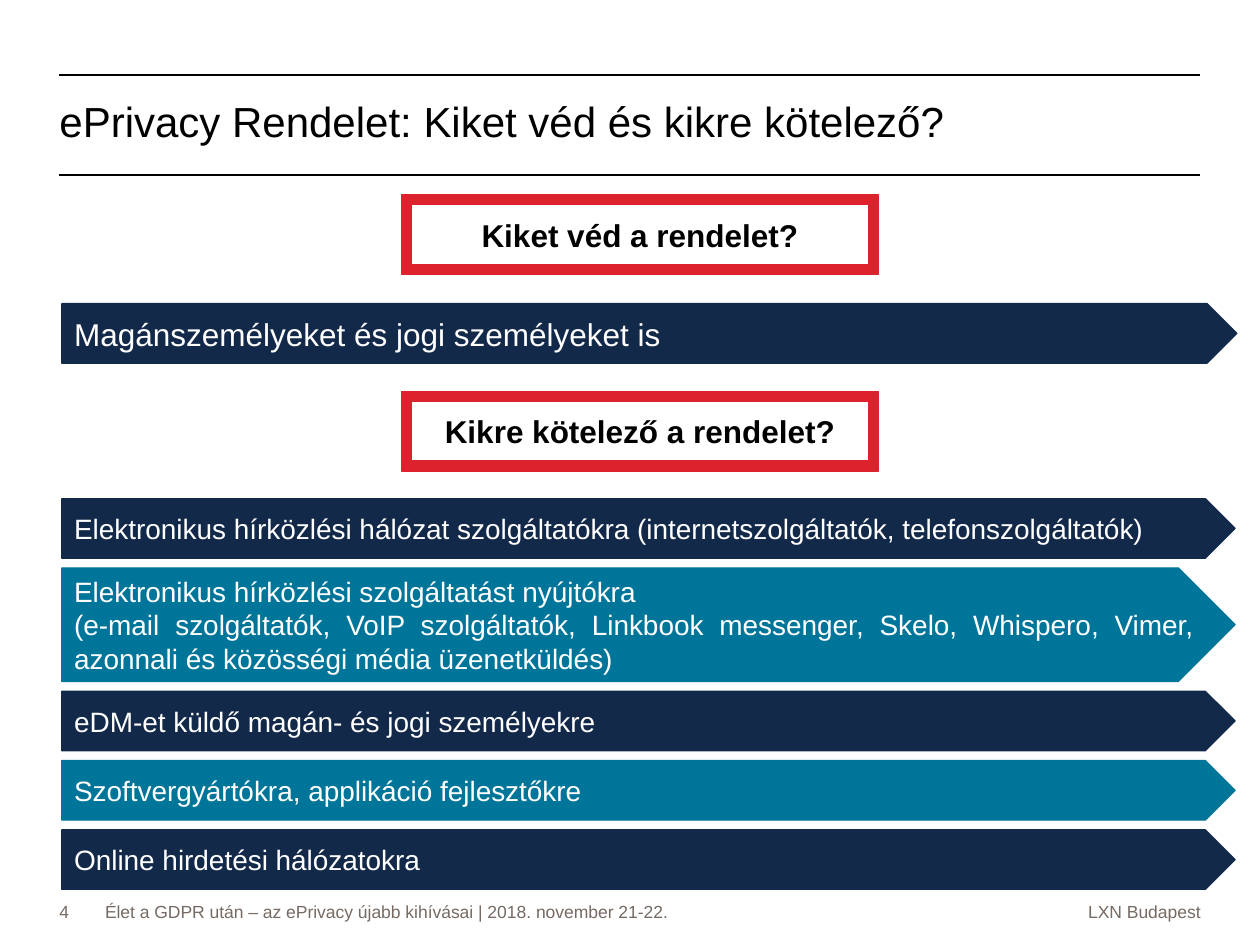
from lxml.etree import SubElement
from pptx import Presentation
from pptx.dml.color import RGBColor
from pptx.enum.shapes import MSO_CONNECTOR, MSO_SHAPE
from pptx.enum.text import MSO_ANCHOR, PP_ALIGN
from pptx.oxml.ns import qn
from pptx.util import Pt

COLORS = {
    "black": "000000",
    "white": "FFFFFF",
    "red": "DC222D",
    "navy": "13294A",
    "teal": "00759A",
    "gray": "766A62",
}
MARGIN = 34
CONTENT_WIDTH = 652
ARROW_HEIGHT = 34
ARROW_GAP = 5.6
OBLIGED_PARTIES = [
    (["Elektronikus hírközlési hálózat szolgáltatókra "
      "(internetszolgáltatók, telefonszolgáltatók)"], ARROW_HEIGHT),
    (["Elektronikus hírközlési szolgáltatást nyújtókra",
      "(e-mail szolgáltatók, VoIP szolgáltatók, Linkbook messenger, Skelo, "
      "Whispero, Vimer, azonnali és közösségi média üzenetküldés)"], 64.8),
    (["eDM-et küldő magán- és jogi személyekre"], ARROW_HEIGHT),
    (["Szoftvergyártókra, applikáció fejlesztőkre"], ARROW_HEIGHT),
    (["Online hirdetési hálózatokra"], ARROW_HEIGHT),
]


def color(name):
    """Return the named palette colour."""
    return RGBColor.from_string(COLORS[name])


def write_text(shape, lines, size, font_color, bold=False, align=PP_ALIGN.LEFT,
               anchor=MSO_ANCHOR.MIDDLE, line_spacing=None):
    """Fill a shape with one formatted paragraph per line."""
    frame = shape.text_frame
    frame.word_wrap = True
    frame.vertical_anchor = anchor
    for index, line in enumerate(lines):
        paragraph = frame.add_paragraph() if index else frame.paragraphs[0]
        paragraph.alignment = align
        paragraph.line_spacing = line_spacing
        run = paragraph.add_run()
        run.text = line
        run.font.name = "Arial"
        run.font.size = Pt(size)
        run.font.bold = bold
        run.font.color.rgb = color(font_color)


def add_label(slide, box, text, **text_format):
    """Add a text box without insets."""
    shape = slide.shapes.add_textbox(*map(Pt, box))
    frame = shape.text_frame
    frame.margin_left = frame.margin_right = 0
    frame.margin_top = frame.margin_bottom = 0
    write_text(shape, [text], **text_format)


def add_block(slide, kind, box, fill, lines, **text_format):
    """Add a preset shape with matching fill and outline."""
    shape = slide.shapes.add_shape(kind, *map(Pt, box))
    shape.shadow.inherit = False
    shape.fill.solid()
    shape.fill.fore_color.rgb = color(fill)
    shape.line.color.rgb = color(fill)
    shape.line.width = Pt(0.75)
    write_text(shape, lines, **text_format)


def add_title(slide, left, top, width, height):
    """Add the title between two horizontal rules."""
    for y in (top, top + height):
        rule = slide.shapes.add_connector(
            MSO_CONNECTOR.STRAIGHT, Pt(left), Pt(y), Pt(left + width), Pt(y))
        rule.line.color.rgb = color("black")
        rule.line.width = Pt(1)
        SubElement(rule._element.spPr, qn("a:effectLst"))
    add_label(slide, (left, top, width, height),
              "ePrivacy Rendelet: Kiket véd és kikre kötelező?",
              size=24, font_color="black", line_spacing=Pt(24))


def add_question(slide, left, top, width, height, text):
    """Add a question inside a red frame."""
    add_block(slide, MSO_SHAPE.FRAME, (left, top, width, height), "red", [text],
              size=18, font_color="black", bold=True, align=PP_ALIGN.CENTER)


def add_arrows(slide, left, top, width, answers, size):
    """Stack answer arrows in alternating colours."""
    for index, (lines, height) in enumerate(answers):
        add_block(slide, MSO_SHAPE.PENTAGON, (left, top, width, height),
                  ("navy", "teal")[index % 2], lines,
                  size=size, font_color="white", align=PP_ALIGN.JUSTIFY)
        top += height + ARROW_GAP


def add_footer(slide, left, top, width, height):
    """Add the page number, event name and office."""
    style = {"size": 10, "font_color": "gray", "anchor": MSO_ANCHOR.TOP}
    add_label(slide, (left, top, 25, height), "4", **style)
    add_label(slide, (left + 26, top, 350, height),
              "Élet a GDPR után – az ePrivacy újabb kihívásai | 2018. november 21-22.",
              **style)
    add_label(slide, (left + width / 2, top, width / 2, height), "LXN Budapest",
              align=PP_ALIGN.RIGHT, **style)


def main():
    """Build and save the presentation."""
    presentation = Presentation()
    presentation.slide_width, presentation.slide_height = Pt(720), Pt(540)
    slide = presentation.slides.add_slide(presentation.slide_layouts[6])
    add_title(slide, MARGIN, 43, CONTENT_WIDTH, 57)
    add_question(slide, 229.6, 111.4, 272.2, 45.4, "Kiket véd a rendelet?")
    add_arrows(slide, 35.3, 173.5, 671.5,
               [(["Magánszemélyeket és jogi személyeket is"], ARROW_HEIGHT)], 18)
    add_question(slide, 229.6, 223.8, 272.2, 45.4, "Kikre kötelező a rendelet?")
    add_arrows(slide, 35.3, 285, 670.5, OBLIGED_PARTIES, 16)
    add_footer(slide, MARGIN, 515, CONTENT_WIDTH, 20)
    presentation.save("out.pptx")


if __name__ == "__main__":
    main()
